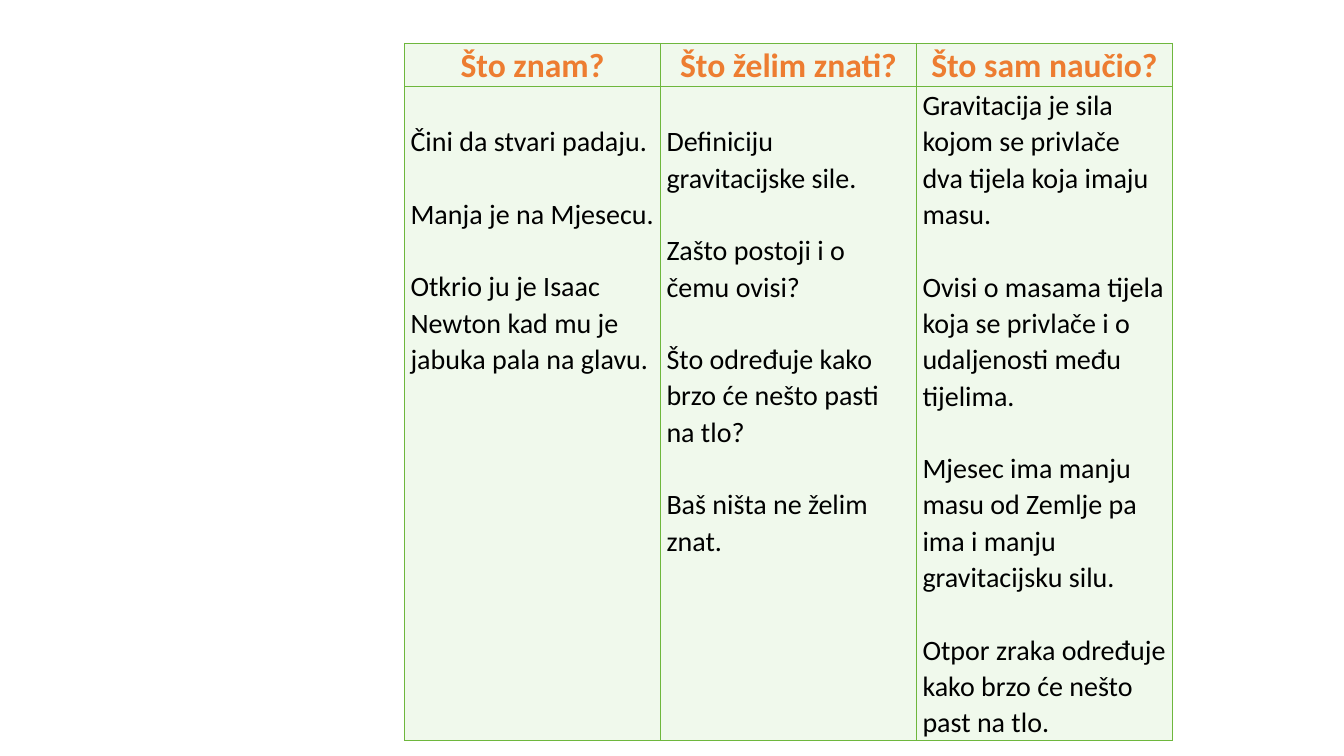
from dataclasses import dataclass

from lxml import etree
from pptx import Presentation
from pptx import util as u
from pptx.dml.color import RGBColor
from pptx.enum import text
from pptx.oxml import ns


@dataclass(frozen=True)
class Theme:
    font: str = "Calibri"
    heading_size: float = 24
    body_size: float = 20
    heading: str = "ED7D31"
    body: str = "000000"
    fill: str = "F0F9EC"
    border: str = "6EB73D"
    border_width: float = 0.75
    line_spacing: float = 1.06
    blank_line: float = 25.9
    side_inset: float = 0.06


@dataclass(frozen=True)
class Grid:
    width: float = 13.33
    height: float = 7.5
    columns: int = 21
    rows: int = 50

    def x(self, columns: float) -> u.Length:
        return u.Inches(self.width * columns / self.columns)

    def y(self, rows: float) -> u.Length:
        return u.Inches(self.height * rows / self.rows)


@dataclass(frozen=True)
class Column:
    heading: str
    answers: tuple[str, ...]
    starts_lower: bool = True


THEME = Theme()
GRID = Grid()
ROW_HEIGHTS = (2, 35.8)
COLUMNS = (
    Column("Što znam?", (
        "Čini da stvari padaju.",
        "Manja je na Mjesecu.",
        "Otkrio ju je Isaac Newton kad mu je jabuka pala na glavu.",
    )),
    Column("Što želim znati?", (
        "Definiciju gravitacijske sile.",
        "Zašto postoji i o čemu ovisi?",
        "Što određuje kako brzo će nešto pasti na tlo?",
        "Baš ništa ne želim znat.",
    )),
    Column("Što sam naučio?", (
        "Gravitacija je sila kojom se privlače dva tijela koja imaju masu.",
        "Ovisi o masama tijela koja se privlače i o udaljenosti među tijelima.",
        "Mjesec ima manju masu od Zemlje pa ima i manju gravitacijsku silu.",
        "Otpor zraka određuje kako brzo će nešto past na tlo.",
    ), starts_lower=False),
)


def style_cell(cell, top_inset: float) -> None:
    cell.margin_left = cell.margin_right = u.Inches(THEME.side_inset)
    cell.margin_top, cell.margin_bottom = u.Pt(top_inset), 0
    cell.fill.solid()
    cell.fill.fore_color.rgb = RGBColor.from_string(THEME.fill)
    properties = cell._tc.get_or_add_tcPr()
    for position, side in enumerate(("lnL", "lnR", "lnT", "lnB")):
        line = etree.Element(ns.qn(f"a:{side}"), w=str(u.Pt(THEME.border_width)))
        fill = etree.SubElement(line, ns.qn("a:solidFill"))
        etree.SubElement(fill, ns.qn("a:srgbClr"), val=THEME.border)
        properties.insert(position, line)


def write_cell(cell, lines: tuple[str, ...], heading: bool) -> None:
    tf = cell.text_frame
    for i, line in enumerate(lines):
        p = tf.add_paragraph() if i else tf.paragraphs[0]
        p.alignment = text.PP_ALIGN.CENTER if heading else text.PP_ALIGN.LEFT
        p.line_spacing = THEME.line_spacing
        if i:
            p.space_before = u.Pt(THEME.blank_line)
        r = p.add_run()
        r.text = line
        r.font.name = THEME.font
        r.font.bold = heading
        r.font.size = u.Pt(THEME.heading_size if heading else THEME.body_size)
        r.font.color.rgb = RGBColor.from_string(THEME.heading if heading else THEME.body)


def add_chart_of_answers(s, columns: tuple[Column, ...]) -> None:
    frame = s.shapes.add_table(len(ROW_HEIGHTS), len(columns), GRID.x(6.32),
                               GRID.y(2.87), GRID.x(12), GRID.y(sum(ROW_HEIGHTS)))
    table = frame.table
    table.first_row = table.horz_banding = False
    for row, height in zip(table.rows, ROW_HEIGHTS):
        row.height = GRID.y(height)
    for i, column in enumerate(columns):
        table.columns[i].width = GRID.x(4)
        top, bottom = table.cell(0, i), table.cell(1, i)
        style_cell(top, 0)
        style_cell(bottom, THEME.blank_line if column.starts_lower else 0)
        write_cell(top, (column.heading,), heading=True)
        write_cell(bottom, column.answers, heading=False)


def main() -> None:
    prs = Presentation()
    prs.slide_width, prs.slide_height = u.Inches(GRID.width), u.Inches(GRID.height)
    s = prs.slides.add_slide(prs.slide_layouts[6])
    add_chart_of_answers(s, COLUMNS)
    prs.save("out.pptx")


if __name__ == "__main__":
    main()
